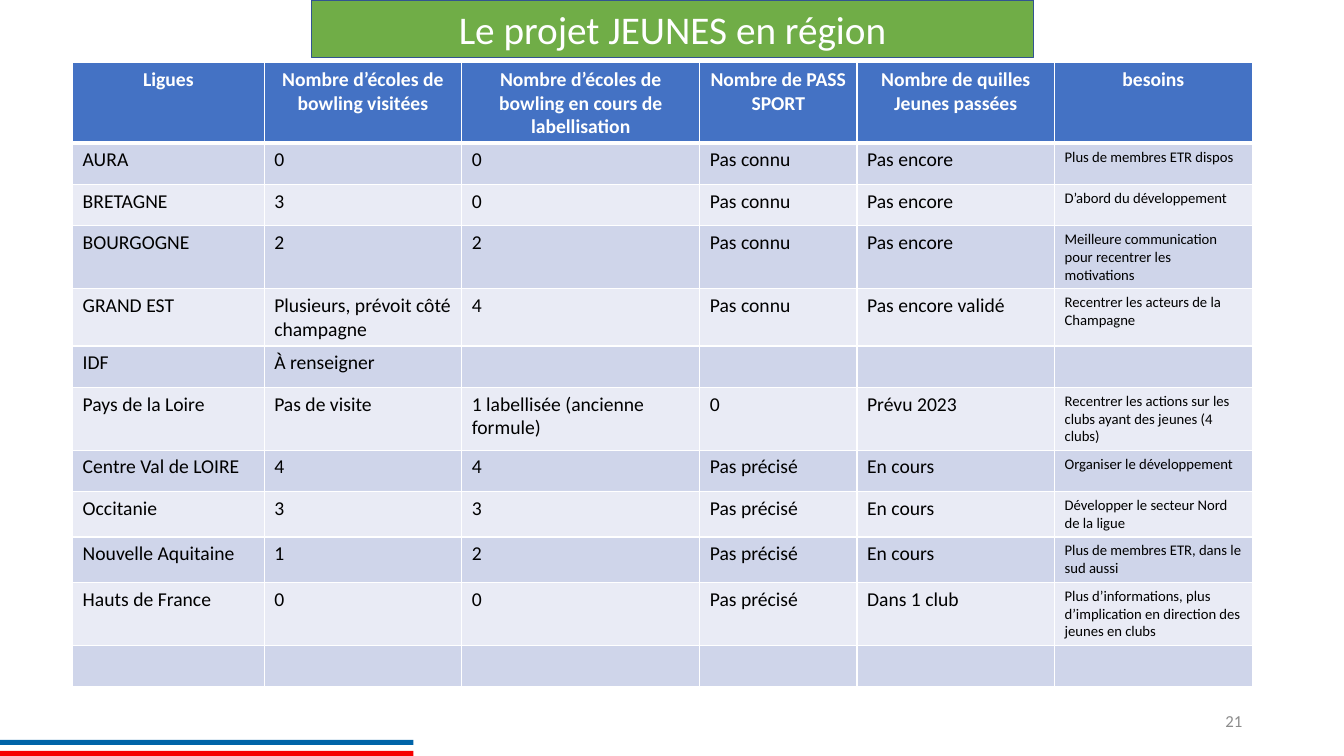
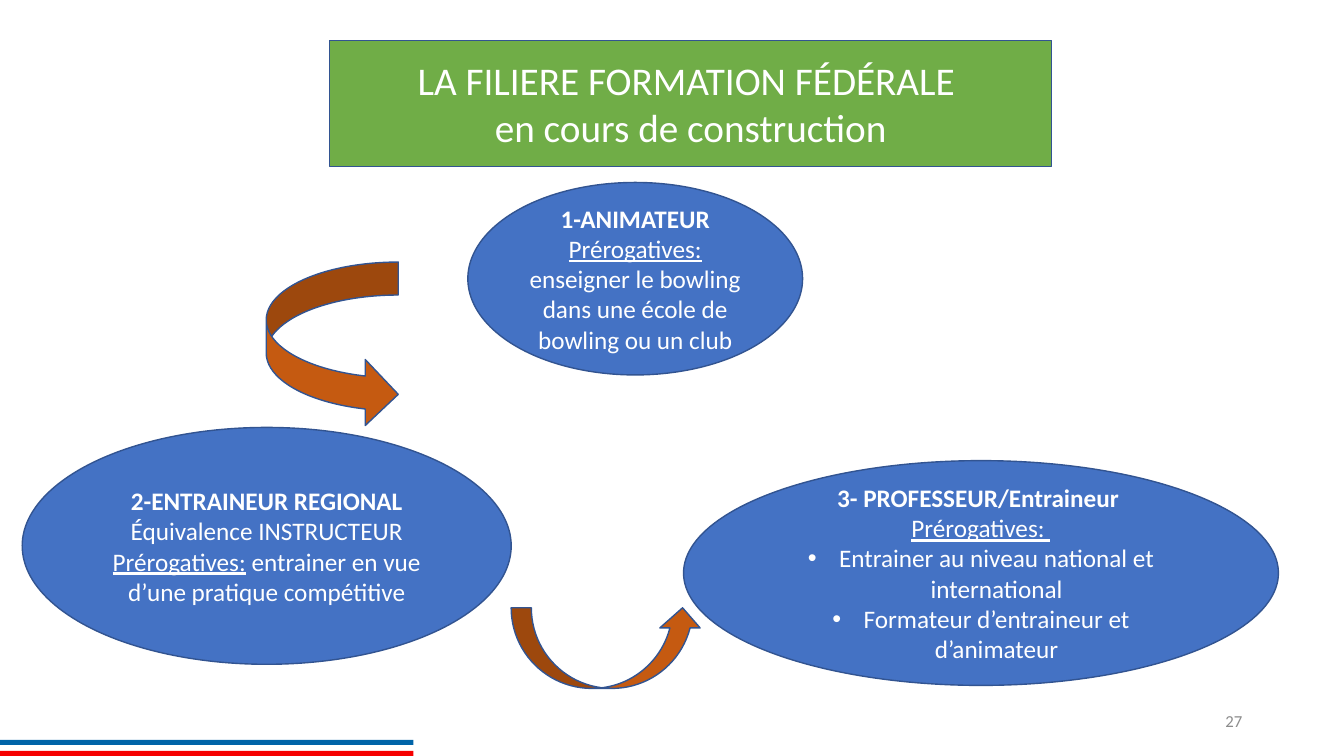
"""Build two slides on the regional youth project and the federal training path."""
import lxml.etree
import pptx
import pptx.dml.color
import pptx.enum.shapes
import pptx.enum.text
import pptx.oxml.ns
import pptx.util

Inches = pptx.util.Inches
Pt = pptx.util.Pt
SHAPES = pptx.enum.shapes.MSO_SHAPE
ALIGN = pptx.enum.text.PP_ALIGN
ANCHOR = pptx.enum.text.MSO_ANCHOR
qn = pptx.oxml.ns.qn

FONT = "Calibri"
WHITE, BLACK, GREY = "FFFFFF", "000000", "8C8C8C"
GREEN, BLUE, ORANGE, OUTLINE = "70AD47", "4472C4", "C55A11", "325491"
ROW_BANDS = ("CFD5EA", "E9EBF5")
STRIPES = [(7.34, "0064A8"), (7.45, "F60000")]

TABLE_BOX = (0.72, 0.62, 11.69, 4.92)
COLUMN_WIDTHS = [1.9, 1.96, 2.36, 1.56, 1.96, 1.96]
ROW_HEIGHT = 0.41
HEADINGS = [
    "Ligues",
    "Nombre d’écoles de bowling visitées",
    "Nombre d’écoles de bowling en cours de labellisation",
    "Nombre de PASS SPORT",
    "Nombre de quilles Jeunes passées",
    "besoins",
]
LEAGUES = [
    ("AURA", "0", "0", "Pas connu", "Pas encore", "Plus de membres ETR dispos"),
    ("BRETAGNE", "3", "0", "Pas connu", "Pas encore", "D’abord du développement"),
    ("BOURGOGNE", "2", "2", "Pas connu", "Pas encore",
     "Meilleure communication pour recentrer les motivations"),
    ("GRAND EST", "Plusieurs, prévoit côté champagne", "4", "Pas connu",
     "Pas encore validé", "Recentrer les acteurs de la Champagne"),
    ("IDF", "À renseigner", "", "", "", ""),
    ("Pays de la Loire", "Pas de visite", "1 labellisée (ancienne formule)", "0",
     "Prévu 2023", "Recentrer les actions sur les clubs ayant des jeunes (4 clubs)"),
    ("Centre Val de LOIRE", "4", "4", "Pas précisé", "En cours",
     "Organiser le développement"),
    ("Occitanie", "3", "3", "Pas précisé", "En cours",
     "Développer le secteur Nord de la ligue"),
    ("Nouvelle Aquitaine", "1", "2", "Pas précisé", "En cours",
     "Plus de membres ETR, dans le sud aussi"),
    ("Hauts de France", "0", "0", "Pas précisé", "Dans 1 club",
     "Plus d’informations, plus d’implication en direction des jeunes en clubs"),
    ("", "", "", "", "", ""),
]

BOLD, UNDERLINE, PLAIN, BULLET = "bold", "underline", "plain", "bullet"
LEVELS = [
    ((4.64, 1.81, 3.32, 1.91), [
        [("1-ANIMATEUR", BOLD)],
        [("Prérogatives:", UNDERLINE),
         (" enseigner le bowling dans une école de bowling ou un club", PLAIN)],
    ]),
    ((0.22, 4.24, 4.85, 2.35), [
        [("2-ENTRAINEUR REGIONAL", BOLD)],
        [("Équivalence INSTRUCTEUR", PLAIN)],
        [("Prérogatives:", UNDERLINE),
         (" entrainer en vue d’une pratique compétitive", PLAIN)],
    ]),
    ((6.78, 4.57, 5.9, 2.23), [
        [("3- PROFESSEUR/Entraineur ", BOLD)],
        [("Prérogatives: ", UNDERLINE)],
        [("Entrainer au niveau national et international", BULLET)],
        [("Formateur d’entraineur et d’animateur", BULLET)],
    ]),
]
ARROWS = [
    (SHAPES.CURVED_RIGHT_ARROW, (2.64, 2.6, 1.31, 1.64)),
    (SHAPES.CURVED_UP_ARROW, (5.07, 6.03, 1.9, 0.8)),
]


def rgb(value):
    return pptx.dml.color.RGBColor.from_string(value)


def inches(bounds):
    return [Inches(length) for length in bounds]


def add_bullet(para):
    properties = para._p.get_or_add_pPr()
    properties.set("marL", str(Inches(0.31)))
    properties.set("indent", str(-Inches(0.31)))
    lxml.etree.SubElement(properties, qn("a:buFont")).set("typeface", "Arial")
    lxml.etree.SubElement(properties, qn("a:buChar")).set("char", "•")


def write(frame, paragraphs, size=18, color=WHITE, align=ALIGN.CENTER,
          anchor=ANCHOR.MIDDLE):
    frame.word_wrap = True
    frame.vertical_anchor = anchor
    for index, spans in enumerate(paragraphs):
        para = frame.add_paragraph() if index else frame.paragraphs[0]
        para.alignment = align
        for text, style in spans:
            span = para.add_run()
            span.text = text
            span.font.name = FONT
            span.font.size = Pt(size)
            span.font.color.rgb = rgb(color)
            span.font.bold = style == BOLD
            span.font.underline = style == UNDERLINE
            if style == BULLET:
                add_bullet(para)


def add_filled(page, kind, bounds, fill, outline=OUTLINE):
    shape = page.shapes.add_shape(kind, *inches(bounds))
    shape.shadow.inherit = False
    shape.fill.solid()
    shape.fill.fore_color.rgb = rgb(fill)
    if outline:
        shape.line.color.rgb = rgb(outline)
        shape.line.width = Pt(1)
    else:
        shape.line.fill.background()
    return shape


def add_page(deck, number, title_lines, title_bounds):
    page = deck.slides.add_slide(deck.slide_layouts[6])
    for top, color in STRIPES:
        add_filled(page, SHAPES.RECTANGLE, (0, top, 4.1, 0.05), color, outline=None)
    number_box = page.shapes.add_textbox(*inches((9.42, 6.95, 3, 0.4)))
    write(number_box.text_frame, [[(number, PLAIN)]], size=12, color=GREY,
          align=ALIGN.RIGHT)
    title = add_filled(page, SHAPES.RECTANGLE, title_bounds, GREEN)
    write(title.text_frame, [[(line, PLAIN)] for line in title_lines], size=28)
    return page


def set_borders(cell, bottom):
    properties = cell._tc.get_or_add_tcPr()
    for side, width in (("L", 1), ("R", 1), ("T", 1), ("B", bottom)):
        line = lxml.etree.SubElement(properties, qn(f"a:ln{side}"))
        line.set("w", str(Pt(width)))
        fill = lxml.etree.SubElement(line, qn("a:solidFill"))
        lxml.etree.SubElement(fill, qn("a:srgbClr")).set("val", WHITE)


def add_league_table(page):
    rows = [HEADINGS] + LEAGUES
    table = page.shapes.add_table(len(rows), len(HEADINGS), *inches(TABLE_BOX)).table
    for column, width in zip(table.columns, COLUMN_WIDTHS):
        column.width = Inches(width)
    for row_index, texts in enumerate(rows):
        table.rows[row_index].height = Inches(ROW_HEIGHT)
        heading = row_index == 0
        for column_index, text in enumerate(texts):
            cell = table.cell(row_index, column_index)
            set_borders(cell, bottom=3 if heading else 1)
            cell.fill.solid()
            cell.fill.fore_color.rgb = rgb(
                BLUE if heading else ROW_BANDS[(row_index - 1) % 2])
            needs = column_index == len(HEADINGS) - 1 and not heading
            if text:
                write(cell.text_frame, [[(text, BOLD if heading else PLAIN)]],
                      size=10.5 if needs else 14,
                      color=WHITE if heading else BLACK,
                      align=ALIGN.CENTER if heading else ALIGN.LEFT,
                      anchor=ANCHOR.TOP)


def main():
    deck = pptx.Presentation()
    deck.slide_width, deck.slide_height = Inches(13.33), Inches(7.5)

    page = add_page(deck, "21", ["Le projet JEUNES en région"], (3.09, 0, 7.16, 0.57))
    add_league_table(page)

    page = add_page(deck, "27",
                    ["LA FILIERE FORMATION FÉDÉRALE ", "en cours de construction"],
                    (3.27, 0.4, 7.16, 1.25))
    for bounds, paragraphs in LEVELS:
        level = add_filled(page, SHAPES.OVAL, bounds, BLUE)
        write(level.text_frame, paragraphs)
    for kind, bounds in ARROWS:
        add_filled(page, kind, bounds, ORANGE)

    deck.save("out.pptx")


if __name__ == "__main__":
    main()
